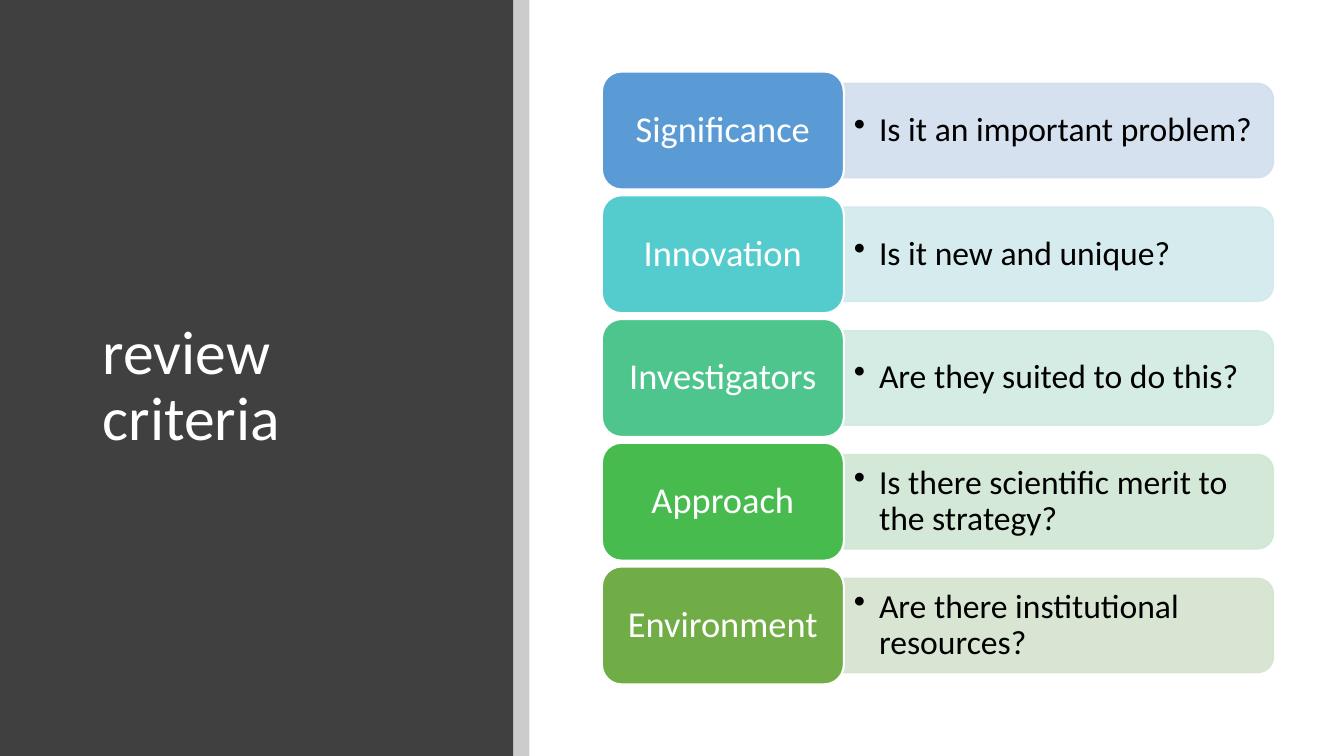
from dataclasses import dataclass

from lxml.etree import SubElement
from pptx import Presentation
from pptx.dml.color import RGBColor
from pptx.enum.shapes import MSO_SHAPE as Shape
from pptx.enum.text import MSO_ANCHOR as Anchor, PP_ALIGN as Align
from pptx.oxml.ns import qn
from pptx.util import Inches, Pt


@dataclass(frozen=True)
class Theme:
    font: str = "Calibri"
    dark: str = "404040"
    black: str = "000000"
    white: str = "FFFFFF"
    title_size: int = 44
    label_size: int = 26
    question_size: int = 24


@dataclass(frozen=True)
class Grid:
    left: float = 5.97
    top: float = 0.71
    height: float = 6.08
    label_width: float = 2.4
    question_width: float = 4.26
    row_height: float = 1.17
    bar_share: float = 0.8

    @property
    def question_left(self):
        return self.left + self.label_width

    def row_top(self, row):
        pitch = (self.height - self.row_height) / (len(CRITERIA) - 1)
        return self.top + row * pitch


THEME = Theme()
GRID = Grid()
PAGE_WIDTH, PAGE_HEIGHT = 13.33, 7.5
PANEL_WIDTH, STRIPE_WIDTH = 5.09, 0.16

CRITERIA = [
    ("Significance", "Is it an important problem?", "5B9BD5", "D2DEEF"),
    ("Innovation", "Is it new and unique?", "54CCCD", "D1E9ED"),
    ("Investigators", "Are they suited to do this?", "4DC58D", "D0EAE1"),
    ("Approach", "Is there scientific merit to the strategy?", "48BB4F", "D0E6D4"),
    ("Environment", "Are there institutional resources?", "70AD47", "D5E3CF"),
]


def set_opacity(box, percent):
    for color in box._element.spPr.iter(qn("a:srgbClr")):
        SubElement(color, qn("a:alpha"), val=str(percent * 1000))


def add_box(page, kind, left, top, width, height, fill, line=None, line_width=1):
    box = page.shapes.add_shape(
        kind, Inches(left), Inches(top), Inches(width), Inches(height)
    )
    box.shadow.inherit = False
    box.fill.solid()
    box.fill.fore_color.rgb = RGBColor.from_string(fill)
    if line:
        box.line.color.rgb = RGBColor.from_string(line)
        box.line.width = Pt(line_width)
    else:
        box.line.fill.background()
    return box


def add_text_box(page, left, top, width, height):
    return page.shapes.add_textbox(
        Inches(left), Inches(top), Inches(width), Inches(height)
    )


def write_text(box, text, size, color, align=Align.LEFT, inset=0.1, bullet=False):
    frame = box.text_frame
    frame.word_wrap = True
    frame.vertical_anchor = Anchor.MIDDLE
    frame.margin_left = frame.margin_right = Inches(inset)
    frame.margin_top = frame.margin_bottom = Inches(0.05)
    para = frame.paragraphs[0]
    para.alignment = align
    para.line_spacing = 0.9
    if bullet:
        properties = para._p.get_or_add_pPr()
        properties.set("marL", str(Inches(0.25)))
        properties.set("indent", str(-Inches(0.25)))
        SubElement(properties, qn("a:buChar"), char="•")
    span = para.add_run()
    span.text = text
    span.font.name = THEME.font
    span.font.size = Pt(size)
    span.font.color.rgb = RGBColor.from_string(color)


def add_title_panel(page, title):
    add_box(page, Shape.RECTANGLE, 0, 0, PANEL_WIDTH, PAGE_HEIGHT, THEME.dark)
    box = add_text_box(page, 0.92, 0.89, 3.65, 5.91)
    write_text(box, title, THEME.title_size, THEME.white)
    stripe = add_box(
        page, Shape.RECTANGLE, PANEL_WIDTH, 0, STRIPE_WIDTH, PAGE_HEIGHT, THEME.black
    )
    set_opacity(stripe, 20)


def add_question(page, row, question, tint):
    bar_height = GRID.row_height * GRID.bar_share
    center_x = GRID.question_left + GRID.question_width / 2
    center_y = GRID.row_top(row) + GRID.row_height / 2
    bar = add_box(
        page,
        Shape.ROUND_2_SAME_RECTANGLE,
        center_x - bar_height / 2,
        center_y - GRID.question_width / 2,
        bar_height,
        GRID.question_width,
        tint,
        line=tint,
    )
    bar.rotation = 90
    set_opacity(bar, 90)
    box = add_text_box(
        page,
        GRID.question_left,
        center_y - bar_height / 2,
        GRID.question_width - 0.04,
        bar_height,
    )
    write_text(box, question, THEME.question_size, THEME.black, bullet=True)


def add_label(page, row, label, fill):
    box = add_box(
        page,
        Shape.ROUNDED_RECTANGLE,
        GRID.left,
        GRID.row_top(row),
        GRID.label_width,
        GRID.row_height,
        fill,
        line=THEME.white,
        line_width=1.5,
    )
    write_text(
        box, label, THEME.label_size, THEME.white, align=Align.CENTER, inset=0.11
    )


def main():
    deck = Presentation()
    deck.slide_width = Inches(PAGE_WIDTH)
    deck.slide_height = Inches(PAGE_HEIGHT)
    page = deck.slides.add_slide(deck.slide_layouts[6])
    add_title_panel(page, "review criteria")
    for row, (label, question, fill, tint) in enumerate(CRITERIA):
        add_question(page, row, question, tint)
        add_label(page, row, label, fill)
    deck.save("out.pptx")


if __name__ == "__main__":
    main()
